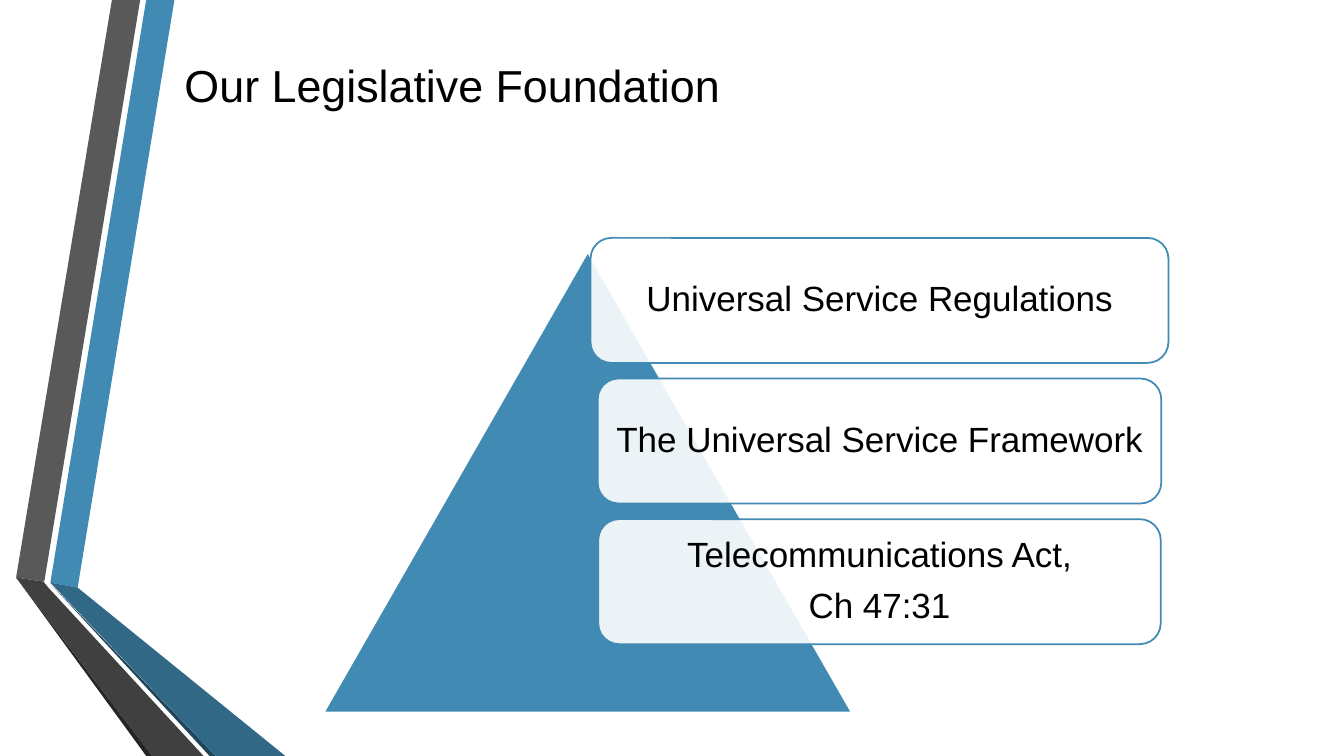
from lxml.etree import SubElement
from pptx import Presentation
from pptx.dml.color import RGBColor
from pptx.enum.shapes import MSO_SHAPE
from pptx.enum.text import MSO_ANCHOR, MSO_AUTO_SIZE, PP_ALIGN
from pptx.oxml.ns import qn
from pptx.util import Inches, Pt

SLIDE_WIDTH = Inches(13.333)
SLIDE_HEIGHT = Inches(7.5)
FONT = "Arial"
COLOURS = {
    "blue": "418AB3",
    "blue fold": "316886",
    "blue edge": "20455A",
    "grey": "595959",
    "grey fold": "404040",
    "grey edge": "262626",
    "white": "FFFFFF",
    "black": "000000",
}

# Ribbon outlines, as percentages of slide width and height
RIBBONS = [
    ("blue", [(3.75, 77.07), (5.78, 77.73), (12.98, 0), (10.88, 0)]),
    ("grey", [(10.43, 0), (8.33, 0), (1.2, 76.4), (3.3, 76.93)]),
    ("grey edge", [(1.2, 76.4), (10.88, 100), (11.33, 100)]),
    ("blue edge", [(3.75, 77.2), (15.6, 100), (16.05, 100)]),
    ("blue fold", [(3.75, 77.07), (16.05, 100), (21.23, 100), (5.78, 77.73)]),
    ("grey fold", [(15.15, 100), (3.6, 77.73), (3.23, 76.93), (1.2, 76.4), (11.33, 100)]),
]

# Law boxes: width in percent and lines of text
LAWS = [
    (43, ["Universal Service Regulations"]),
    (41.93, ["The Universal Service Framework"]),
    (41.85, ["Telecommunications Act,", "Ch 47:31"]),
]
LAW_CENTRE = 65.44
LAW_TOP = 31.47
LAW_HEIGHT = 16.53
LAW_STEP = 18.6


def colour(name):
    return RGBColor.from_string(COLOURS[name])


def across(percent):
    return round(SLIDE_WIDTH * percent / 100)


def down(percent):
    return round(SLIDE_HEIGHT * percent / 100)


def paint(shape, fill, line=None):
    shape.shadow.inherit = False
    shape.fill.solid()
    shape.fill.fore_color.rgb = colour(fill)
    if line:
        shape.line.color.rgb = colour(line)
        shape.line.width = Pt(1.25)
    else:
        shape.line.fill.background()


def set_opacity(shape, percent):
    fill_colour = shape.fill._xPr.find(qn("a:solidFill"))[0]
    SubElement(fill_colour, qn("a:alpha")).set("val", str(percent * 1000))


def format_text(text_frame, size):
    text_frame.word_wrap = True
    text_frame.auto_size = MSO_AUTO_SIZE.NONE
    text_frame.vertical_anchor = MSO_ANCHOR.MIDDLE
    for paragraph in text_frame.paragraphs:
        paragraph.alignment = PP_ALIGN.CENTER
        for run in paragraph.runs:
            run.font.name = FONT
            run.font.size = Pt(size)
            run.font.color.rgb = colour("black")


def add_ribbon(slide, fill, points):
    corners = [(across(x), down(y)) for x, y in points]
    builder = slide.shapes.build_freeform(*corners[0])
    builder.add_line_segments(corners[1:], close=True)
    paint(builder.convert_to_shape(), fill)


def set_title(slide, text):
    title = slide.shapes.title
    title.left, title.top = across(-1.65), down(6.13)
    title.width, title.height = across(70.65), down(10.13)
    title.text_frame.text = text
    format_text(title.text_frame, 32)


def add_pyramid(slide):
    pyramid = slide.shapes.add_shape(
        MSO_SHAPE.ISOSCELES_TRIANGLE,
        across(24.08), down(33.33), across(39.3), down(60.93))
    paint(pyramid, "blue", "white")


def add_law(slide, row, width, lines):
    box = slide.shapes.add_shape(
        MSO_SHAPE.ROUNDED_RECTANGLE,
        across(LAW_CENTRE - width / 2), down(LAW_TOP + row * LAW_STEP),
        across(width), down(LAW_HEIGHT))
    paint(box, "white", "blue")
    set_opacity(box, 90)
    text_frame = box.text_frame
    text_frame.text = "\n".join(lines)
    format_text(text_frame, 25)
    text_frame.margin_left = text_frame.margin_right = Inches(0.1)
    text_frame.margin_top = text_frame.margin_bottom = Inches(0.1)
    for paragraph in text_frame.paragraphs:
        paragraph.line_spacing = 0.9
        paragraph.space_after = Pt(10)


def main():
    presentation = Presentation()
    presentation.slide_width = SLIDE_WIDTH
    presentation.slide_height = SLIDE_HEIGHT
    slide = presentation.slides.add_slide(presentation.slide_layouts.get_by_name("Title Only"))

    # Folded ribbons on the left
    for fill, points in RIBBONS:
        add_ribbon(slide, fill, points)

    set_title(slide, "Our Legislative Foundation")

    # Pyramid with the laws stacked over it
    add_pyramid(slide)
    for row, (width, lines) in enumerate(LAWS):
        add_law(slide, row, width, lines)

    presentation.save("out.pptx")


if __name__ == "__main__":
    main()
